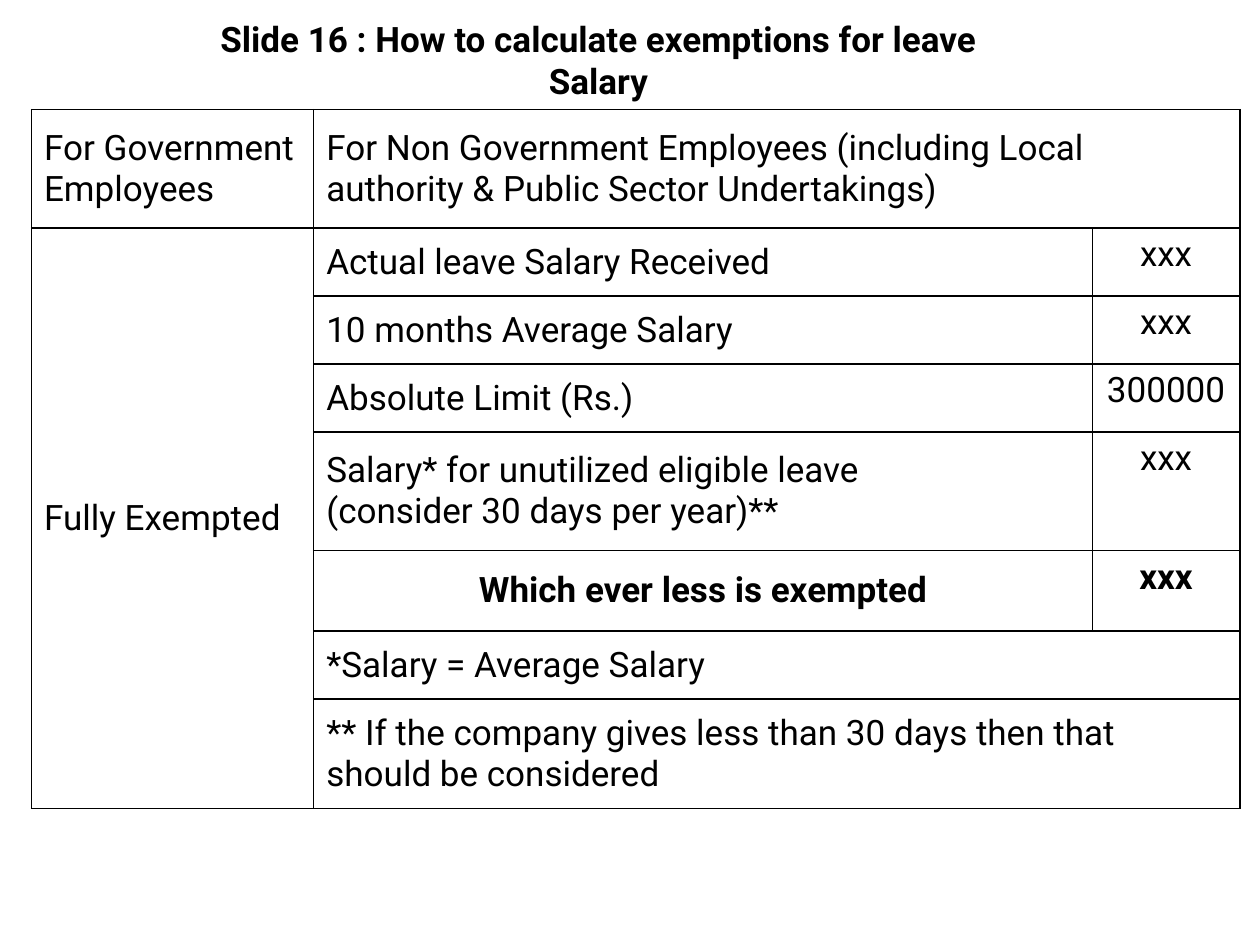
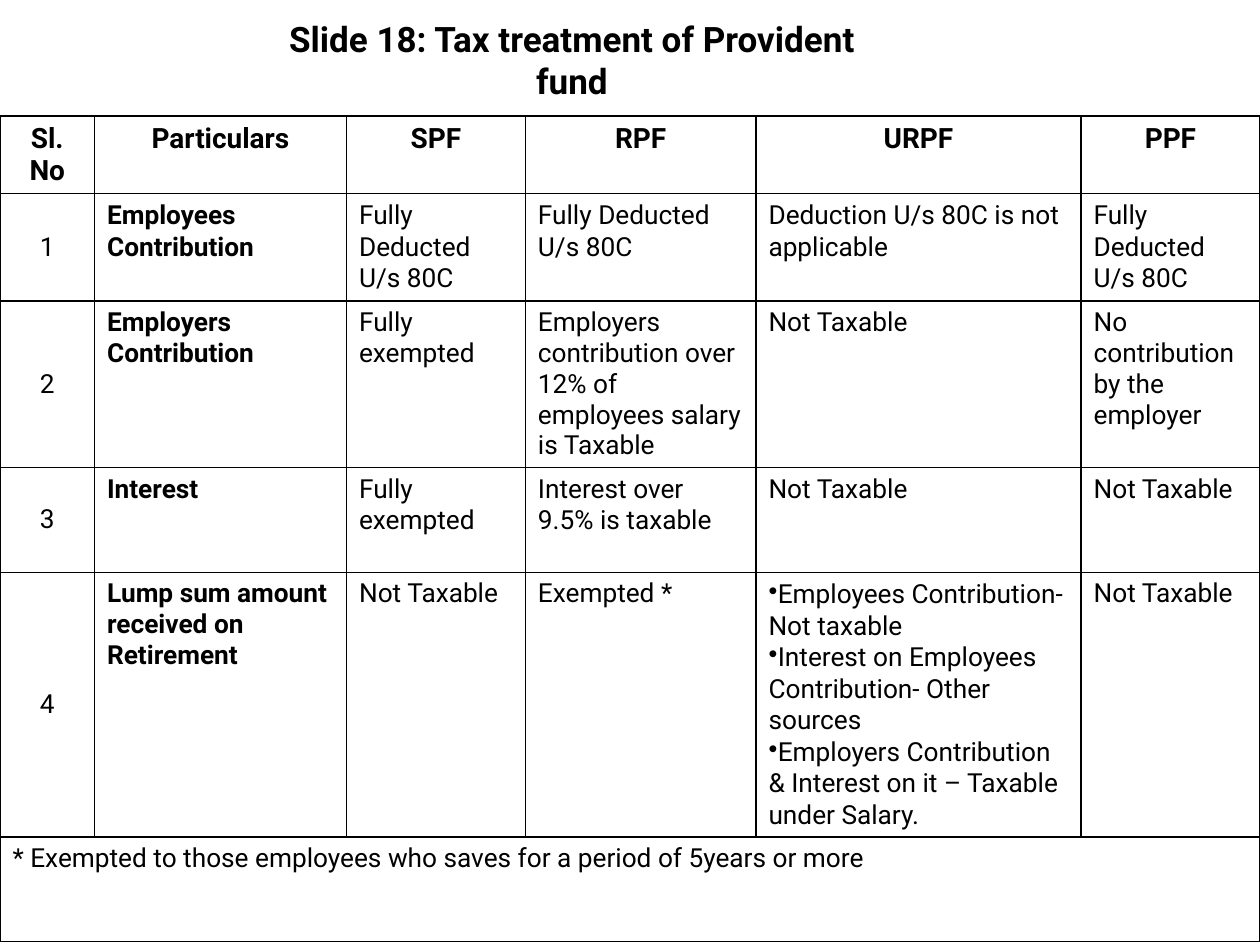
from lxml import etree
from pptx import Presentation
from pptx import util as u
from pptx.dml.color import RGBColor
from pptx.enum import text
from pptx.oxml.ns import qn

PX = 9144  # one hundred px to the inch
FONT = "Roboto"
BLACK = "000000"
TITLE_SIZE = 20
TITLE_ONLY = 5
CENTER, LEFT = text.PP_ALIGN.CENTER, text.PP_ALIGN.LEFT
MIDDLE, TOP = text.MSO_ANCHOR.MIDDLE, text.MSO_ANCHOR.TOP

LEAVE_ROWS = [
    ["For Government Employees",
     "For Non Government Employees (including Local authority & Public Sector Undertakings)", ""],
    ["Fully Exempted", "Actual leave Salary Received", "xxx"],
    ["", "10 months Average Salary", "xxx"],
    ["", "Absolute Limit (Rs.)", "300000"],
    ["", "Salary* for unutilized eligible leave\n(consider 30 days per year)**", "xxx"],
    ["", "Which ever less is exempted", "xxx"],
    ["", "*Salary = Average Salary", ""],
    ["", "** If the company gives less than 30 days then that should be considered", ""],
]
LEAVE_RESULT_ROW = 5

FUND_ROWS = [
    ["Sl. No", "Particulars", "SPF", "RPF", "URPF", "PPF"],
    ["1", "Employees Contribution", "Fully Deducted U/s 80C", "Fully Deducted U/s 80C",
     "Deduction U/s 80C is not applicable", "Fully Deducted U/s 80C"],
    ["2", "Employers Contribution", "Fully exempted",
     "Employers contribution over 12% of employees salary is Taxable",
     "Not Taxable", "No contribution by the employer"],
    ["3", "Interest", "Fully exempted", "Interest over 9.5% is taxable",
     "Not Taxable", "Not Taxable"],
    ["4", "Lump sum amount received on Retirement", "Not Taxable", "Exempted *",
     "•Employees Contribution- Not taxable\n"
     "•Interest on Employees Contribution- Other sources\n"
     "•Employers Contribution\n"
     "& Interest on it – Taxable under Salary.", "Not Taxable"],
    ["* Exempted to those employees who saves for a period of 5years or more",
     "", "", "", "", ""],
]


def px(length):
    return u.Emu(length * PX)


def rgb(color):
    return RGBColor.from_string(color)


def style_paragraph(para, size, bold=False, align=LEFT, spacing=None):
    para.alignment = align
    if spacing:
        para.line_spacing = u.Pt(spacing)
    font = para.font
    font.name, font.size, font.bold = FONT, u.Pt(size), bold
    font.color.rgb = rgb(BLACK)


def add_bullet(para):
    properties = para._p.get_or_add_pPr()
    properties.set("marL", "0")
    properties.set("indent", "0")
    etree.SubElement(properties, qn("a:buChar"), char="•")


def add_titled_slide(deck, title, left, width):
    page = deck.slides.add_slide(deck.slide_layouts[TITLE_ONLY])
    box = page.shapes.title
    box.left, box.top, box.width, box.height = px(left), px(25), px(width), px(45)
    frame = box.text_frame
    frame.text = title
    frame.word_wrap = True
    frame.auto_size = text.MSO_AUTO_SIZE.NONE
    frame.vertical_anchor = MIDDLE
    style_paragraph(frame.paragraphs[0], TITLE_SIZE, True, CENTER)
    return page


def draw_borders(cell):
    properties = cell._tc.get_or_add_tcPr()
    for side in ("lnL", "lnR", "lnT", "lnB"):
        line = etree.SubElement(properties, qn(f"a:{side}"), w=str(u.Pt(1)))
        fill = etree.SubElement(line, qn("a:solidFill"))
        etree.SubElement(fill, qn("a:srgbClr"), val=BLACK)


def add_grid(page, left, top, widths, heights):
    """Add a table with thin black borders and no fill."""
    grid = page.shapes.add_table(len(heights), len(widths), px(left), px(top),
                                 px(sum(widths)), px(sum(heights))).table
    grid.first_row = grid.horz_banding = False
    for column, width in zip(grid.columns, widths):
        column.width = px(width)
    for row, height in zip(grid.rows, heights):
        row.height = px(height)
    for cell in grid.iter_cells():
        draw_borders(cell)
        cell.fill.background()
    return grid


def merge(grid, first, last):
    grid.cell(*first).merge(grid.cell(*last))


def write_cell(cell, content, size, anchor=TOP, **style):
    """Write one paragraph a line; a leading • becomes a real bullet."""
    cell.vertical_anchor = anchor
    cell.text = content.replace("•", "")
    for para, line in zip(cell.text_frame.paragraphs, content.split("\n")):
        if line.startswith("•"):
            add_bullet(para)
        style_paragraph(para, size, **style)


def add_leave_salary(deck):
    page = add_titled_slide(
        deck, "Slide 16 : How to calculate exemptions for leave Salary", 150, 650)
    grid = add_grid(page, 25, 87, [224, 618, 117], [94, 54, 54, 54, 94, 64, 54, 87])
    merge(grid, (1, 0), (7, 0))
    for row in (0, 6, 7):
        merge(grid, (row, 1), (row, 2))
    for r, row in enumerate(LEAVE_ROWS):
        for c, content in enumerate(row):
            result, amount = r == LEAVE_RESULT_ROW, c == 2
            write_cell(grid.cell(r, c), content, 20, TOP if amount else MIDDLE,
                       bold=result, align=CENTER if result or amount else LEFT)


def add_provident_fund(deck):
    page = add_titled_slide(deck, "Slide 18: Tax treatment of Provident fund", 200, 508)
    grid = add_grid(page, 0, 92, [75, 200, 142, 183, 258, 142], [34, 79, 102, 83, 195, 83])
    note = len(FUND_ROWS) - 1
    merge(grid, (note, 0), (note, 5))
    for r, row in enumerate(FUND_ROWS):
        for c, content in enumerate(row):
            header, number = r == 0, c == 0 and 0 < r < note
            write_cell(grid.cell(r, c), content, 16 if header else 15,
                       MIDDLE if number else TOP,
                       bold=header or c == 1,
                       align=CENTER if header or number else LEFT,
                       spacing=18 if r == 1 or "•" in content else None)


def main():
    deck = Presentation()
    deck.slide_width, deck.slide_height = px(1000), px(750)
    add_leave_salary(deck)
    add_provident_fund(deck)
    deck.save("out.pptx")


if __name__ == "__main__":
    main()
